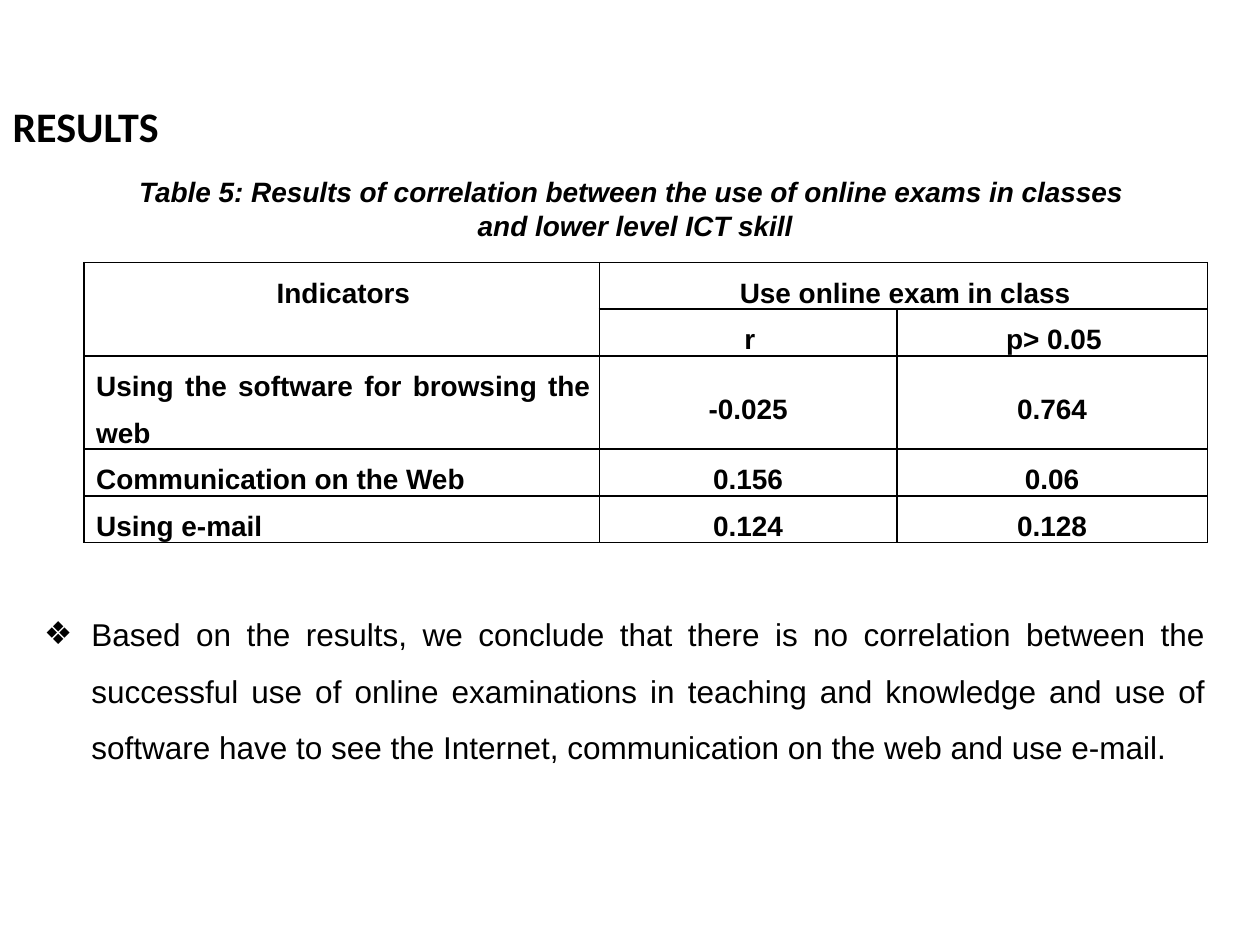
"""Build the slide with the correlation results for online exams."""
from lxml.etree import SubElement
from pptx import Presentation
from pptx.dml.color import RGBColor
from pptx.enum.text import MSO_ANCHOR as Anchor, MSO_AUTO_SIZE as AutoSize, PP_ALIGN as Align
from pptx.oxml.ns import qn
from pptx.util import Pt

COLORS = {"ink": "000000", "paper": "FFFFFF"}
TITLE = "RESULTS"
CAPTION = [
    "Table 5: Results of correlation between the use of online exams in classes ",
    "and lower level ICT skill",
]
ROWS = [
    ["Indicators", "Use online exam in class", ""],
    ["", "r", "p> 0.05"],
    ["Using the software for browsing the web", "-0.025", "0.764"],
    ["Communication on the Web", "0.156", "0.06"],
    ["Using e-mail", "0.124", "0.128"],
]
HEADER_ROWS = 2
COLUMN_WIDTHS = [294.5, 170, 177.5]
ROW_HEIGHT = 24.5
CONCLUSION = (
    "Based on the results, we conclude that there is no correlation between the "
    "successful use of online examinations in teaching and knowledge and use of "
    "software have to see the Internet, communication on the web and use e-mail."
)


def write(frame, lines, size, font="Arial", bold=False, italic=False, align=Align.LEFT,
          spacing=1.0, margin=0, indent=0, bullet=None, anchor=None):
    """Fill a text frame with formatted paragraphs."""
    frame.word_wrap = True
    if anchor is not None:
        frame.vertical_anchor = anchor
    for number, line in enumerate(lines):
        para = frame.paragraphs[0] if number == 0 else frame.add_paragraph()
        para.alignment, para.line_spacing = align, spacing
        para.space_before = para.space_after = Pt(0)
        props = para._p.get_or_add_pPr()
        props.set("marL", str(Pt(margin)))
        props.set("indent", str(Pt(indent)))
        if bullet:
            SubElement(props, qn("a:buFont"), typeface=font)
            SubElement(props, qn("a:buChar"), char=bullet)
        span = para.add_run()
        span.text = line
        span.font.name, span.font.size = font, Pt(size)
        span.font.bold, span.font.italic = bold, italic
        span.font.color.rgb = RGBColor.from_string(COLORS["ink"])


def place(box, left, top, width, height):
    """Move and size a shape, in points."""
    box.left, box.top, box.width, box.height = map(Pt, (left, top, width, height))


def outline(cell):
    """Draw a line on each side of a table cell."""
    for side in ("lnL", "lnR", "lnT", "lnB"):
        line = SubElement(cell._tc.get_or_add_tcPr(), qn(f"a:{side}"), w=str(Pt(1)))
        fill = SubElement(line, qn("a:solidFill"))
        SubElement(fill, qn("a:srgbClr"), val=COLORS["ink"])


def add_results(page):
    """Add the table of correlations."""
    frame = page.shapes.add_table(len(ROWS), len(COLUMN_WIDTHS), Pt(48), Pt(150),
                                  Pt(sum(COLUMN_WIDTHS)), Pt(ROW_HEIGHT * len(ROWS)))
    table = frame.table
    table.first_row = table.horz_banding = False
    for column, width in zip(table.columns, COLUMN_WIDTHS):
        column.width = Pt(width)
    table.cell(0, 0).merge(table.cell(1, 0))
    table.cell(0, 1).merge(table.cell(0, 2))
    for r, values in enumerate(ROWS):
        table.rows[r].height = Pt(ROW_HEIGHT)
        for c, value in enumerate(values):
            cell = table.cell(r, c)
            outline(cell)
            cell.fill.solid()
            cell.fill.fore_color.rgb = RGBColor.from_string(COLORS["paper"])
            cell.margin_left = cell.margin_right = Pt(5)
            cell.margin_top = cell.margin_bottom = Pt(0)
            cell.vertical_anchor = Anchor.MIDDLE if c else Anchor.TOP
            if cell.is_spanned:
                continue
            header = r < HEADER_ROWS
            is_value = c > 0 and not header
            write(cell.text_frame, [value], 16, bold=True, spacing=1.5,
                  align=Align.CENTER if c or header else Align.JUSTIFY,
                  margin=0 if is_value else 2, indent=-2 if is_value else 0)


def main():
    """Assemble the page and save the deck."""
    deck = Presentation()
    deck.slide_width, deck.slide_height = Pt(720), Pt(540)
    page = deck.slides.add_slide(deck.slide_layouts[1])
    title, body = page.placeholders

    place(title, 0, 6, 570, 84)
    title.text_frame.auto_size = AutoSize.NONE
    write(title.text_frame, [TITLE], 24, font="Calibri", bold=True, anchor=Anchor.BOTTOM)

    add_results(page)

    caption = page.shapes.add_textbox(Pt(48), Pt(96), Pt(630), Pt(46))
    write(caption.text_frame, CAPTION, 16, bold=True, italic=True,
          align=Align.CENTER, anchor=Anchor.MIDDLE)

    place(body, 18, 337, 678, 101.5)
    body.text_frame.auto_size = AutoSize.NONE
    write(body.text_frame, [CONCLUSION], 18, align=Align.JUSTIFY, spacing=1.5,
          margin=27, indent=-27, bullet="❖", anchor=Anchor.TOP)

    deck.save("out.pptx")


if __name__ == "__main__":
    main()
